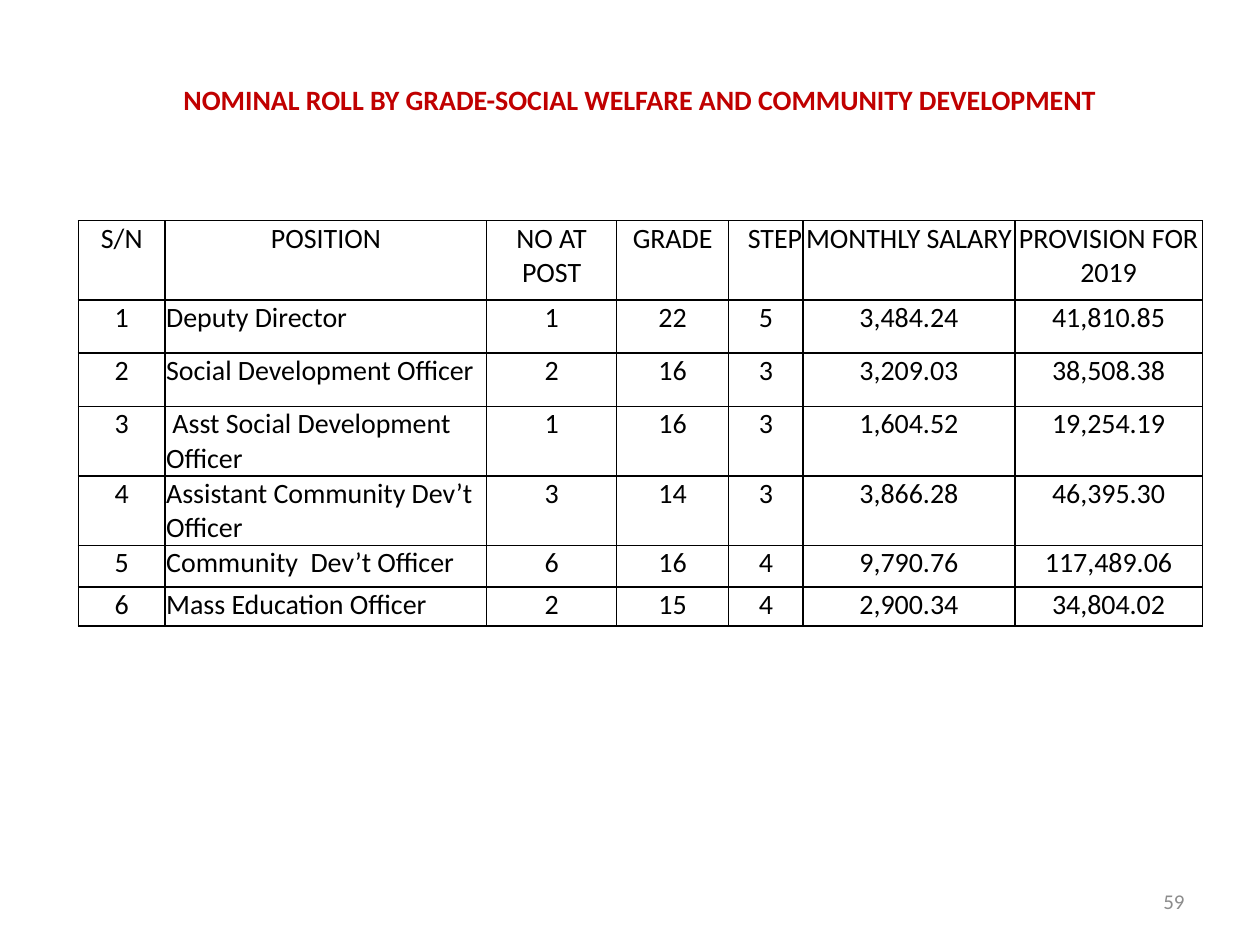
from pptx import Presentation
from pptx.dml.color import RGBColor
from pptx.enum.text import MSO_ANCHOR as ANCHOR, PP_ALIGN as ALIGN
from pptx.oxml import parse_xml
from pptx.oxml.ns import nsdecls
from pptx.util import Cm, Pt


def style(p, size, color, align, bold=False):
    p.alignment = align
    for r in p.runs:
        r.font.name = "Calibri"
        r.font.size = Pt(size)
        r.font.bold = bold
        r.font.color.rgb = RGBColor.from_string(color)


def add_borders(cell, color="000000", width=Pt(1)):
    for side in ("lnL", "lnR", "lnT", "lnB"):
        cell._tc.get_or_add_tcPr().append(parse_xml(
            f'<a:{side} {nsdecls("a")} w="{width}"><a:solidFill>'
            f'<a:srgbClr val="{color}"/></a:solidFill></a:{side}>'))


prs = Presentation()
prs.slide_width, prs.slide_height = Cm(25.4), Cm(19.05)
s = prs.slides.add_slide(prs.slide_layouts[5])

title = s.shapes.title
title.left, title.top, title.width, title.height = Cm(2.74), Cm(1.47), Cm(20.32), Cm(1.07)
tf = title.text_frame
tf.text = "NOMINAL ROLL BY GRADE-SOCIAL WELFARE AND COMMUNITY DEVELOPMENT"
tf.vertical_anchor = ANCHOR.MIDDLE
style(tf.paragraphs[0], 16, "C00000", ALIGN.CENTER, bold=True)

rows = [
    ("S/N", "POSITION", "NO AT POST", "GRADE", "STEP", "MONTHLY SALARY", "PROVISION FOR 2019"),
    ("1", "Deputy Director", "1", "22", "5", "3,484.24", "41,810.85"),
    ("2", "Social Development Officer", "2", "16", "3", "3,209.03", "38,508.38"),
    ("3", " Asst Social Development Officer", "1", "16", "3", "1,604.52", "19,254.19"),
    ("4", "Assistant Community Dev’t Officer", "3", "14", "3", "3,866.28", "46,395.30"),
    ("5", "Community  Dev’t Officer", "6", "16", "4", "9,790.76", "117,489.06"),
    ("6", "Mass Education Officer", "2", "15", "4", "2,900.34", "34,804.02"),
]
col_widths = [1.75, 6.48, 2.62, 2.26, 1.5, 4.27, 3.78]
row_heights = [1.6, 1.07, 1.07, 1.07, 1.07, 0.84, 0.79]

table = s.shapes.add_table(len(rows), len(col_widths), Cm(1.58), Cm(4.45),
                           Cm(sum(col_widths)), Cm(sum(row_heights))).table
table.first_row = table.horz_banding = False
for col, width in zip(table.columns, col_widths):
    col.width = Cm(width)
for row, height in zip(table.rows, row_heights):
    row.height = Cm(height)

for i, values in enumerate(rows):
    for j, value in enumerate(values):
        cell = table.cell(i, j)
        cell.margin_left = cell.margin_right = cell.margin_top = Cm(0.02)
        cell.margin_bottom = 0
        add_borders(cell)
        cell.fill.background()
        cell.text_frame.text = value
        align = ALIGN.CENTER
        if i > 0 and j == 1:
            align = ALIGN.LEFT
        elif value == "STEP":
            align = ALIGN.RIGHT
        style(cell.text_frame.paragraphs[0], 16, "000000", align)

number = s.shapes.add_textbox(Cm(18.2), Cm(17.66), Cm(5.93), Cm(1.01))
tf = number.text_frame
tf.word_wrap = True
tf.vertical_anchor = ANCHOR.MIDDLE
tf.text = "59"
style(tf.paragraphs[0], 12, "8C8C8C", ALIGN.RIGHT)

prs.save("out.pptx")
